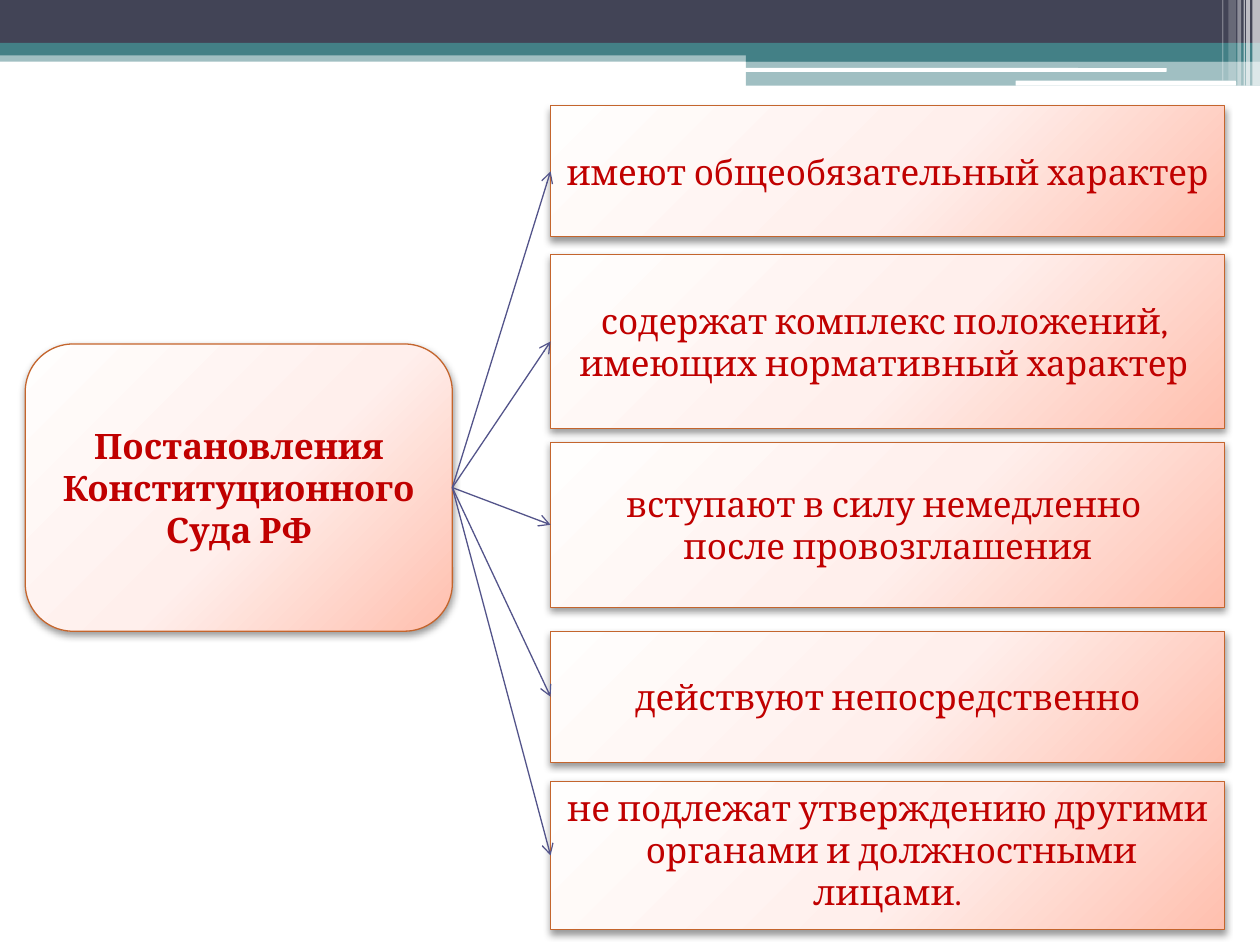
from dataclasses import dataclass

from lxml.etree import SubElement
from pptx import Presentation
from pptx.dml.color import RGBColor
from pptx.enum.shapes import MSO_CONNECTOR, MSO_SHAPE
from pptx.enum.text import MSO_ANCHOR, PP_ALIGN
from pptx.oxml import parse_xml
from pptx.oxml.ns import nsdecls, qn
from pptx.util import Inches, Pt


@dataclass(frozen=True)
class Theme:
    navy: str = "424456"
    teal: str = "438086"
    white: str = "FFFFFF"
    edge: str = "C4652D"
    arrow: str = "53548A"
    ink: str = "C00000"
    shade: str = "000000"
    stops: tuple = ((0, "FFFEFD"), (55, "FFEFEC"), (100, "FFBFAE"))
    font: str = "Cambria"
    size: float = 20
    line: float = 0.75


THEME = Theme()
RECT, ROUND = MSO_SHAPE.RECTANGLE, MSO_SHAPE.ROUNDED_RECTANGLE

BANDS = [
    (RECT, 0, 0.4, 10, 0.09, THEME.teal, 50),
    (RECT, 0, 0, 10, 0.34, THEME.navy, 100),
    (RECT, 0, 0.34, 10, 0.1, THEME.teal, 100),
    (RECT, 5.92, 0.39, 4.08, 0.1, THEME.teal, 100),
    (RECT, 5.92, 0.48, 4.08, 0.2, THEME.teal, 50),
    (ROUND, 5.91, 0.54, 3.35, 0.03, THEME.white, 100),
    (ROUND, 8.06, 0.64, 1.75, 0.04, THEME.white, 100),
]
STRIPES = [
    (9.94, 0.06, 0.68, 65),
    (9.89, 0.03, 0.68, 65),
    (9.87, 0.01, 0.68, 60),
    (9.82, 0.03, 0.68, 40),
    (9.75, 0.06, 0.64, 20),
    (9.7, 0.01, 0.64, 30),
]
TOPIC = ["Постановления Конституционного", " Суда РФ "]
TRAITS = [
    (0.84, 1.04, ["имеют общеобязательный характер"]),
    (2.02, 1.38, ["содержат комплекс положений, ", "имеющих нормативный характер "]),
    (3.51, 1.31, ["вступают в силу немедленно ", "после провозглашения"]),
    (5.01, 1.04, ["действуют непосредственно"]),
    (6.2, 1.18, ["не подлежат утверждению другими",
                 " органами и должностными лицами."]),
]


def add_form(slide, kind, left, top, width, height):
    form = slide.shapes.add_shape(
        kind, Inches(left), Inches(top), Inches(width), Inches(height))
    form.shadow.inherit = False
    return form


def add_band(slide, kind, left, top, width, height, color, alpha):
    band = add_form(slide, kind, left, top, width, height)
    band.fill.solid()
    band.fill.fore_color.rgb = RGBColor.from_string(color)
    band.line.fill.background()
    if alpha < 100:
        tint = band._element.spPr.find(".//" + qn("a:srgbClr"))
        SubElement(tint, qn("a:alpha"), val=str(alpha * 1000))


def set_glow(card):
    stops = "".join(
        f'<a:gs pos="{pos * 1000}"><a:srgbClr val="{color}"/></a:gs>'
        for pos, color in THEME.stops)
    props = card._element.spPr
    props.insert(2, parse_xml(
        f'<a:gradFill {nsdecls("a")} rotWithShape="1"><a:gsLst>{stops}</a:gsLst>'
        '<a:path path="circle"><a:fillToRect l="-40000" t="-90000" '
        'r="140000" b="190000"/></a:path></a:gradFill>'))
    props.find(qn("a:effectLst")).append(parse_xml(
        f'<a:outerShdw {nsdecls("a")} blurRad="{Pt(4.1)}" dist="{Pt(2)}" '
        'dir="5400000" rotWithShape="0">'
        f'<a:srgbClr val="{THEME.shade}"><a:alpha val="40000"/></a:srgbClr>'
        '</a:outerShdw>'))


def add_card(slide, kind, left, top, width, height, lines, bold=False):
    card = add_form(slide, kind, left, top, width, height)
    card.line.color.rgb = RGBColor.from_string(THEME.edge)
    card.line.width = Pt(THEME.line)
    set_glow(card)
    frame = card.text_frame
    frame.word_wrap = True
    frame.vertical_anchor = MSO_ANCHOR.MIDDLE
    for i, line in enumerate(lines):
        para = frame.add_paragraph() if i else frame.paragraphs[0]
        para.alignment = PP_ALIGN.CENTER
        run = para.add_run()
        run.text = line
        run.font.name = THEME.font
        run.font.size = Pt(THEME.size)
        run.font.bold = bold
        run.font.color.rgb = RGBColor.from_string(THEME.ink)
    return card


def add_arrow(slide, start, end):
    arrow = slide.shapes.add_connector(MSO_CONNECTOR.STRAIGHT, 0, 0, 0, 0)
    arrow.begin_connect(start, 3)
    arrow.end_connect(end, 1)
    arrow.line.color.rgb = RGBColor.from_string(THEME.arrow)
    arrow.line.width = Pt(THEME.line)
    props = arrow._element.spPr
    SubElement(props.find(qn("a:ln")), qn("a:tailEnd"), type="arrow")
    SubElement(props, qn("a:effectLst"))


def main():
    deck = Presentation()
    deck.slide_width, deck.slide_height = Inches(10), Inches(7.5)
    slide = deck.slides.add_slide(deck.slide_layouts[6])
    for band in BANDS:
        add_band(slide, *band)
    for left, width, height, alpha in STRIPES:
        add_band(slide, RECT, left, 0, width, height, THEME.white, alpha)
    topic = add_card(slide, ROUND, 0.2, 2.73, 3.39, 2.28, TOPIC, bold=True)
    cards = [add_card(slide, RECT, 4.37, top, 5.35, height, lines)
             for top, height, lines in TRAITS]
    cards[-1].text_frame.margin_bottom = Inches(0.15)
    for card in reversed(cards):
        add_arrow(slide, topic, card)
    deck.save("out.pptx")


if __name__ == "__main__":
    main()
